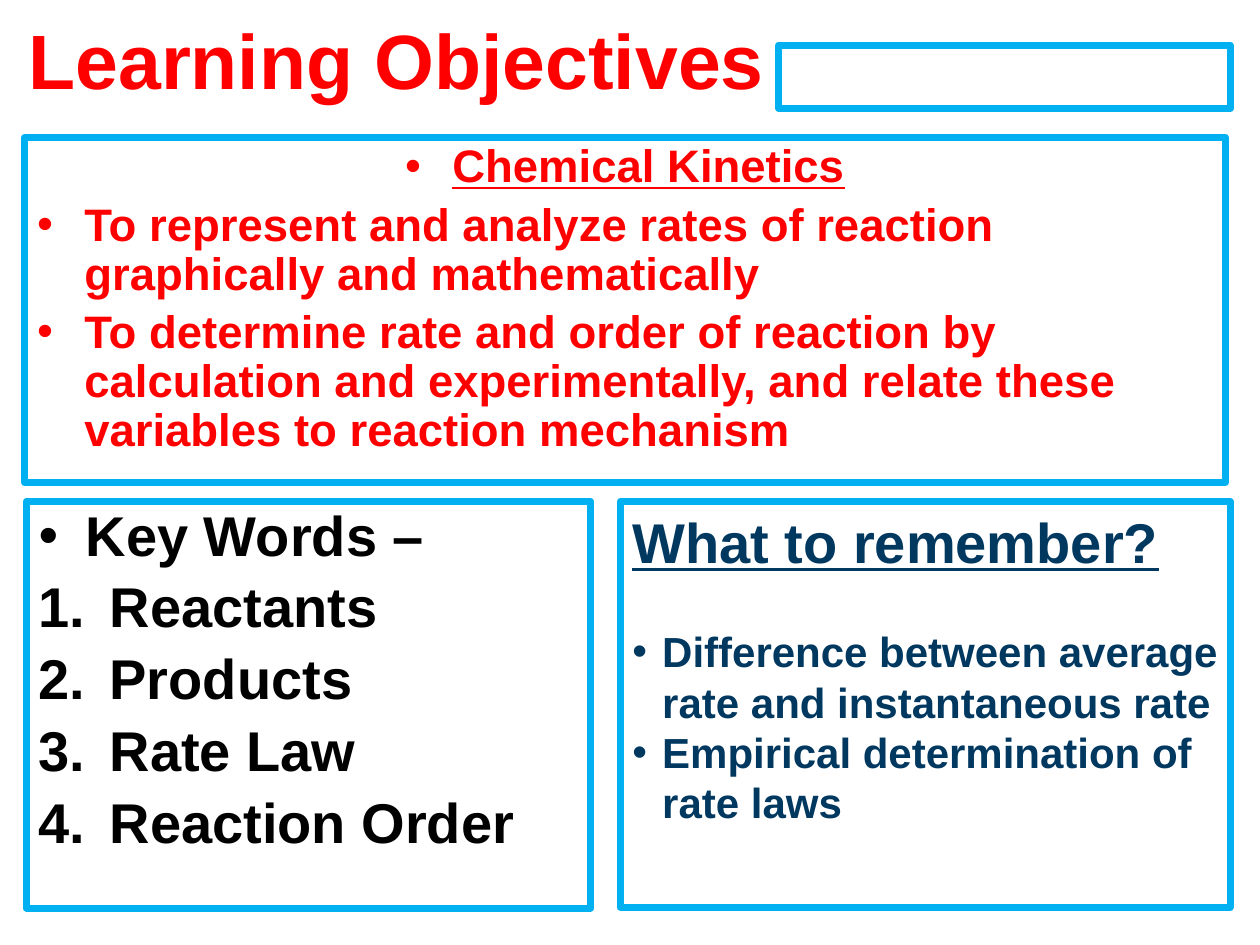
from lxml.etree import SubElement
from pptx import Presentation
from pptx.dml.color import RGBColor
from pptx.enum.shapes import MSO_SHAPE as Shape
from pptx.enum.text import MSO_ANCHOR as Anchor, PP_ALIGN as Align
from pptx.oxml.ns import qn
from pptx.util import Cm, Pt

RED, BLACK, NAVY, BLUE, WHITE = "FF0000", "000000", "003860", "00B0F0", "FFFFFF"


def color(value):
    """Turn a hex string into a colour."""
    return RGBColor.from_string(value)


class Deck:
    """Hold the style and the current slide."""

    font = "Arial"

    def __init__(self, width, height):
        """Start a presentation of the given size."""
        self.prs = Presentation()
        self.prs.slide_width, self.prs.slide_height = Cm(width), Cm(height)

    def slide(self):
        """Add a title-only slide."""
        self.s = self.prs.slides.add_slide(self.prs.slide_layouts[5])

    def style(self, p, size, ink, underline=False):
        """Format the runs of a paragraph."""
        for r in p.runs:
            f = r.font
            f.name, f.size, f.bold, f.underline = self.font, Pt(size), True, underline
            f.color.rgb = color(ink)

    def title(self, text, x, y, w, h, size, ink):
        """Place and format the title."""
        sp = self.s.shapes.title
        sp.left, sp.top, sp.width, sp.height = Cm(x), Cm(y), Cm(w), Cm(h)
        tf = sp.text_frame
        tf.text = text
        tf.vertical_anchor = Anchor.MIDDLE
        p = tf.paragraphs[0]
        p.alignment = Align.CENTER
        self.style(p, size, ink)

    def box(self, x, y, w, h):
        """Add a framed box and return its text frame."""
        sp = self.s.shapes.add_shape(Shape.RECTANGLE, Cm(x), Cm(y), Cm(w), Cm(h))
        sp.shadow.inherit = False
        sp.fill.solid()
        sp.fill.fore_color.rgb = color(WHITE)
        sp.line.color.rgb = color(BLUE)
        sp.line.width = Pt(4)
        tf = sp.text_frame
        tf.word_wrap = True
        tf.vertical_anchor = Anchor.TOP
        return tf

    def paragraphs(self, tf, lines, spacing=1.0, gap=0):
        """Fill a text frame with one paragraph per line and return them."""
        tf.text = "\n".join(lines)
        for i, p in enumerate(tf.paragraphs):
            p.alignment = Align.LEFT
            p.line_spacing = spacing
            p.space_before = Pt(gap if i else 0)
        return tf.paragraphs

    def bullet(self, p, indent, numbered=False):
        """Give a paragraph a hanging bullet or number."""
        pPr = p._p.get_or_add_pPr()
        pPr.set("marL", str(Cm(indent)))
        pPr.set("indent", str(-Cm(indent)))
        if numbered:
            SubElement(pPr, qn("a:buFont"), typeface="+mj-lt")
            SubElement(pPr, qn("a:buAutoNum"), type="arabicPeriod")
        else:
            SubElement(pPr, qn("a:buFont"), typeface=self.font)
            SubElement(pPr, qn("a:buChar"), char="•")


def main():
    """Build the learning objectives slide."""
    deck = Deck(25.4, 19.05)
    deck.slide()
    deck.title("Learning Objectives", -0.3, -0.41, 16.6, 3.18, 44, RED)

    objectives = deck.paragraphs(deck.box(0.5, 2.77, 24.2, 6.96), [
        "Chemical Kinetics",
        "To represent and analyze rates of reaction graphically and mathematically",
        "To determine rate and order of reaction by calculation and experimentally, "
        "and relate these variables to reaction mechanism",
    ], 0.9, 5.2)
    for i, p in enumerate(objectives):
        deck.bullet(p, 0.95)
        deck.style(p, 26, RED, underline=i == 0)
    objectives[0].alignment = Align.CENTER

    deck.box(15.7, 0.91, 9.1, 1.28)

    key_words = deck.paragraphs(deck.box(0.53, 10.11, 11.38, 8.2), [
        "Key Words –", "Reactants", "Products", "Rate Law", "Reaction Order",
    ], 0.9, 6.4)
    for i, p in enumerate(key_words):
        deck.bullet(p, 1.43 if i else 0.95, numbered=i > 0)
        deck.style(p, 32, BLACK)

    heading, *points = deck.paragraphs(deck.box(12.5, 10.11, 12.3, 8.18), [
        "What to remember?",
        "Difference between average rate and instantaneous rate",
        "Empirical determination of rate laws",
    ])
    deck.style(heading, 32, NAVY, underline=True)
    for p in points:
        deck.bullet(p, 0.6)
        deck.style(p, 24, NAVY)
    points[0].space_before = Pt(29)

    deck.prs.save("out.pptx")


if __name__ == "__main__":
    main()
